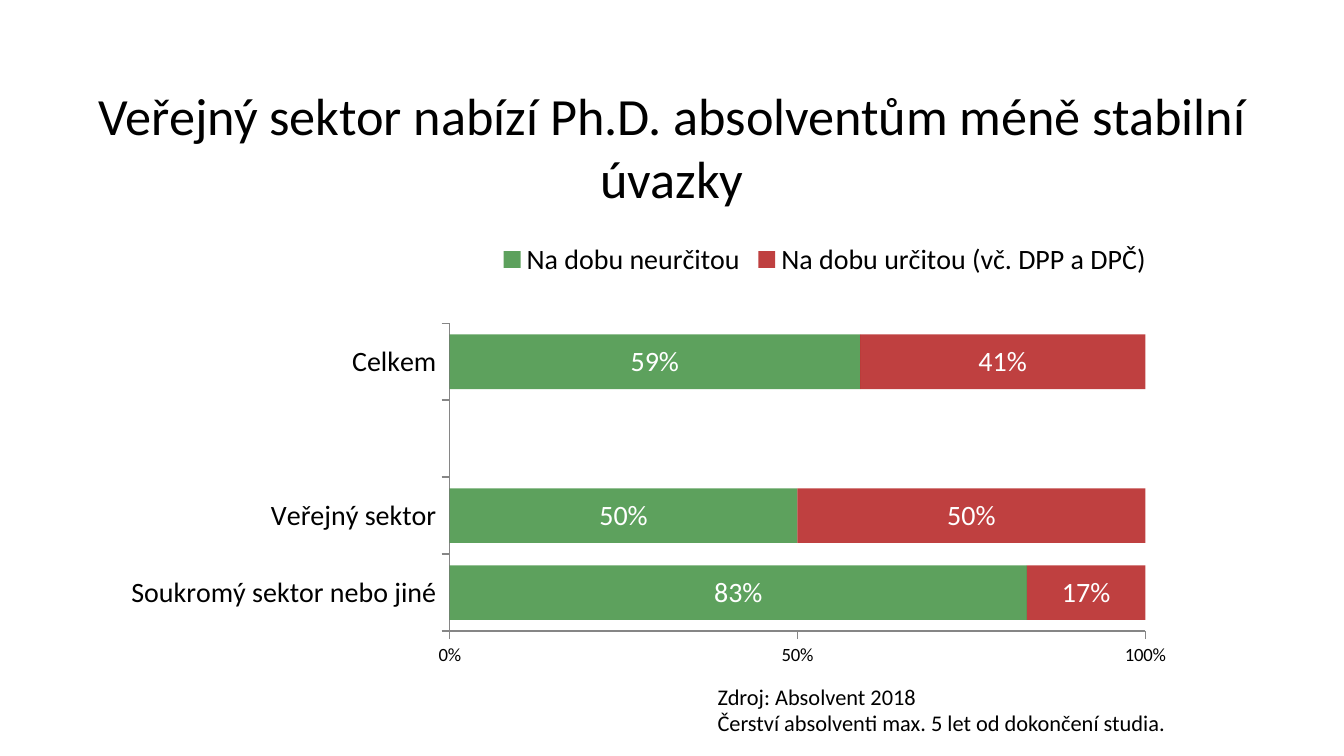
"""Build the slide on contract stability of Ph.D. graduates by sector."""
from dataclasses import dataclass

from lxml import etree
from pptx import Presentation
from pptx import util as u
from pptx.chart.chart import Chart
from pptx.chart.data import CategoryChartData
from pptx.dml.color import RGBColor
from pptx.enum import chart as ce
from pptx.enum import text
from pptx.oxml.ns import qn


@dataclass(frozen=True)
class Theme:
    font: str = "Calibri"
    ink: str = "000000"
    paper: str = "FFFFFF"
    axis: str = "868686"
    permanent: str = "288228"
    temporary: str = "AA0000"
    opacity: int = 75
    title: int = 28
    label: int = 15
    source: int = 12
    scale: int = 10


@dataclass(frozen=True)
class Contract:
    name: str
    shares: tuple
    color: str


@dataclass(frozen=True)
class Box:
    left: float
    top: float
    width: float
    height: float

    def points(self) -> tuple:
        return tuple(u.Pt(n) for n in (self.left, self.top, self.width, self.height))


THEME = Theme()
SECTORS = ("Soukromý sektor nebo jiné", "Veřejný sektor", "", "Celkem")
CONTRACTS = (
    Contract("Na dobu neurčitou", (0.83, 0.5, None, 0.59), THEME.permanent),
    Contract("Na dobu určitou (vč. DPP a DPČ)", (0.17, 0.5, None, 0.41), THEME.temporary),
)
HEADLINE = "Veřejný sektor nabízí Ph.D. absolventům méně stabilní úvazky"
SOURCE = ("Zdroj: Absolvent 2018", "Čerství absolventi max. 5 let od dokončení studia.")


def style_font(font, size: int, color: str = THEME.ink) -> None:
    font.name = THEME.font
    font.size = u.Pt(size)
    font.color.rgb = RGBColor.from_string(color)


def place(parent, index: int, **fractions: float) -> None:
    for old in parent.findall(qn("c:layout")):
        parent.remove(old)
    layout = etree.Element(qn("c:layout"))
    parent.insert(index, layout)
    manual = etree.SubElement(layout, qn("c:manualLayout"))
    if "w" in fractions:
        etree.SubElement(manual, qn("c:layoutTarget")).set("val", "inner")
    for mode in ("xMode", "yMode"):
        etree.SubElement(manual, qn(f"c:{mode}")).set("val", "edge")
    for key, fraction in fractions.items():
        etree.SubElement(manual, qn(f"c:{key}")).set("val", str(fraction))


def style_axis(axis, size: int) -> None:
    axis.has_major_gridlines = False
    axis.major_tick_mark = ce.XL_TICK_MARK.OUTSIDE
    axis.minor_tick_mark = ce.XL_TICK_MARK.NONE
    axis.format.line.color.rgb = RGBColor.from_string(THEME.axis)
    axis.format.line.width = u.Pt(0.75)
    style_font(axis.tick_labels.font, size)


def style_series(series, contract: Contract) -> None:
    fill = series.format.fill
    fill.solid()
    fill.fore_color.rgb = RGBColor.from_string(contract.color)
    color = next(series._element.iter(qn("a:srgbClr")))
    etree.SubElement(color, qn("a:alpha")).set("val", str(THEME.opacity * 1000))
    series.invert_if_negative = False
    labels = series.data_labels
    labels.show_value = True
    labels.number_format = "0%"
    labels.number_format_is_linked = False
    style_font(labels.font, THEME.label, THEME.paper)


def add_contracts_chart(slide, box: Box) -> Chart:
    shares = CategoryChartData(number_format="0%")
    shares.categories = SECTORS
    for contract in CONTRACTS:
        shares.add_series(contract.name, contract.shares)
    chart = slide.shapes.add_chart(
        ce.XL_CHART_TYPE.BAR_STACKED_100, *box.points(), shares).chart
    chart.has_title = False
    style_font(chart.font, THEME.scale)

    bars = chart.plots[0]
    bars.gap_width = 41
    bars.overlap = 100
    bars.vary_by_categories = False
    for series, contract in zip(bars.series, CONTRACTS):
        style_series(series, contract)

    style_axis(chart.category_axis, THEME.label)
    percent = chart.value_axis
    style_axis(percent, THEME.scale)
    percent.minimum_scale = 0
    percent.maximum_scale = 1
    percent.major_unit = 0.5
    percent.tick_labels.number_format = "0%"
    percent.tick_labels.number_format_is_linked = False

    chart.has_legend = True
    legend = chart.legend
    legend.position = ce.XL_LEGEND_POSITION.TOP
    legend.include_in_layout = False
    style_font(legend.font, THEME.label)
    place(legend._element, 1, x=0.37, y=0.04)
    place(chart._chartSpace.chart.plotArea, 0, x=0.33, y=0.23, w=0.62, h=0.68)
    return chart


def set_headline(slide, box: Box) -> None:
    headline = slide.shapes.title
    headline.left, headline.top, headline.width, headline.height = box.points()
    frame = headline.text_frame
    frame.text = HEADLINE
    frame.auto_size = text.MSO_AUTO_SIZE.NONE
    frame.vertical_anchor = text.MSO_ANCHOR.MIDDLE
    frame.paragraphs[0].alignment = text.PP_ALIGN.CENTER
    style_font(frame.paragraphs[0].font, THEME.title)


def add_source(slide, box: Box) -> None:
    frame = slide.shapes.add_textbox(*box.points()).text_frame
    frame.word_wrap = True
    frame.auto_size = text.MSO_AUTO_SIZE.SHAPE_TO_FIT_TEXT
    frame.text = "\n".join(SOURCE)
    for line in frame.paragraphs:
        style_font(line.font, THEME.source)


def main() -> None:
    deck = Presentation()
    deck.slide_width, deck.slide_height = u.Pt(720), u.Pt(405)
    slide = deck.slides.add_slide(deck.slide_layouts[5])
    set_headline(slide, Box(36, 44.6, 648, 67.5))
    add_contracts_chart(slide, Box(42.5, 117.4, 601.2, 242.6))
    add_source(slide, Box(377.3, 362.2, 274.3, 36))
    deck.save("out.pptx")


if __name__ == "__main__":
    main()
